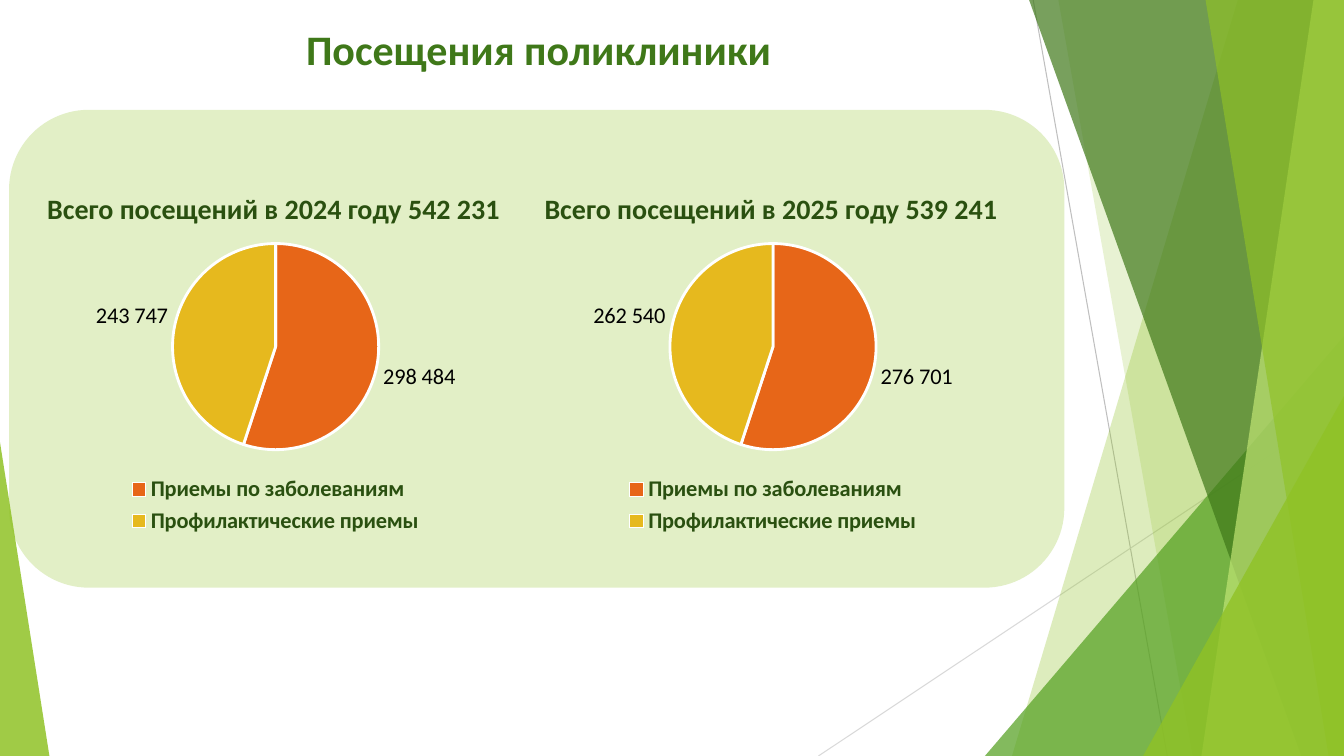
from dataclasses import dataclass

from lxml.etree import SubElement
from pptx import Presentation
from pptx.chart.data import CategoryChartData
from pptx.dml.color import RGBColor
from pptx.enum.chart import XL_CHART_TYPE as ChartType
from pptx.enum.chart import XL_LABEL_POSITION as LabelPosition
from pptx.enum.chart import XL_LEGEND_POSITION as LegendPosition
from pptx.enum.shapes import MSO_CONNECTOR as Connector
from pptx.enum.shapes import MSO_SHAPE as Shape
from pptx.enum.text import MSO_ANCHOR as Anchor
from pptx.enum.text import MSO_AUTO_SIZE as AutoSize
from pptx.enum.text import PP_ALIGN as Align
from pptx.oxml import parse_xml
from pptx.oxml.ns import nsdecls, qn
from pptx.util import Pt


@dataclass(frozen=True)
class Theme:
    font: str = "Calibri"
    chart_font: str = "Lato"
    lime: str = "90C226"
    green: str = "54A021"
    forest: str = "3F7819"
    pale: str = "C0E474"
    heading: str = "2A5010"
    black: str = "000000"
    white: str = "FFFFFF"
    ray_dark: str = "BFBFBF"
    ray_light: str = "D9D9D9"
    slices: tuple = ("E76618", "E6B91E")
    title_size: int = 30
    heading_size: int = 20
    label_size: int = 16
    chart_size: int = 10


WIDTH, HEIGHT = 960, 540
COLUMN_STEP = 355.3
CATEGORIES = ("Приемы по заболеваниям", "Профилактические приемы")
# Heading, slice values, slice labels
YEARS = (
    ("Всего посещений в 2024 году 542 231", (298484, 243747), ("298 484", "243 747")),
    ("Всего посещений в 2025 году 539 241", (298484, 243747), ("276 701", "262 540")),
)


def apply_format(target, values):
    for name, value in values.items():
        setattr(target, name, value)


class SlideBuilder:
    def __init__(self, slide, theme):
        self.slide = slide
        self.shapes = slide.shapes
        self.theme = theme

    def style_font(self, font, size, color, bold=True, name=None):
        apply_format(font, {"name": name or self.theme.font, "size": Pt(size), "bold": bold})
        font.color.rgb = RGBColor.from_string(color)

    def paint(self, shape, color, opacity):
        shape.shadow.inherit = False
        shape.fill.solid()
        shape.fill.fore_color.rgb = RGBColor.from_string(color)
        shape.line.fill.background()
        solid_color = shape.fill._xPr.find(qn("a:solidFill"))[0]
        SubElement(solid_color, qn("a:alpha"), val=str(opacity * 1000))

    def ray(self, start, end, color):
        line = self.shapes.add_connector(Connector.STRAIGHT, *map(Pt, start + end))
        line.line.width = Pt(0.75)
        line.line.color.rgb = RGBColor.from_string(color)
        SubElement(line._element.spPr, qn("a:effectLst"))

    def band(self, top_left, bottom_left, color, opacity):
        """Full-height band that reaches the right edge of the slide."""
        builder = self.shapes.build_freeform(Pt(top_left), 0)
        corners = ((WIDTH, 0), (WIDTH, HEIGHT), (bottom_left, HEIGHT))
        builder.add_line_segments([(Pt(x), Pt(y)) for x, y in corners], close=True)
        self.paint(builder.convert_to_shape(), color, opacity)

    def preset(self, kind, box, color, opacity, adjustment=None):
        shape = self.shapes.add_shape(kind, *map(Pt, box))
        if adjustment is not None:
            shape.adjustments[0] = adjustment
        self.paint(shape, color, opacity)

    def title(self, text, box):
        title = self.shapes.title
        apply_format(title, dict(zip(("left", "top", "width", "height"), map(Pt, box))))
        frame = title.text_frame
        frame.text = text
        apply_format(frame, {"word_wrap": True, "auto_size": AutoSize.NONE,
                             "vertical_anchor": Anchor.MIDDLE})
        paragraph = frame.paragraphs[0]
        paragraph.alignment = Align.CENTER
        self.style_font(paragraph.font, self.theme.title_size, self.theme.forest)

    def heading(self, text, box):
        frame = self.shapes.add_textbox(*map(Pt, box)).text_frame
        frame.text = text
        apply_format(frame, {"word_wrap": False, "auto_size": AutoSize.SHAPE_TO_FIT_TEXT})
        self.style_font(frame.paragraphs[0].font, self.theme.heading_size, self.theme.heading)

    def pie(self, values, labels, box):
        theme = self.theme
        data = CategoryChartData(number_format="#,##0")
        data.categories = CATEGORIES
        data.add_series("Series 1", values)
        chart = self.shapes.add_chart(ChartType.PIE, *map(Pt, box), data).chart
        apply_format(chart, {"has_title": False, "has_legend": True})
        self.style_font(chart.font, theme.chart_size, theme.black, False, theme.chart_font)
        apply_format(chart.legend, {"position": LegendPosition.BOTTOM, "include_in_layout": False})
        self.style_font(chart.legend.font, theme.label_size, theme.heading)

        # Slices and their labels
        plot = chart.plots[0]
        plot.vary_by_categories = True
        series = plot.series[0]
        apply_format(series.data_labels, {
            "show_value": True, "number_format": "#,##0",
            "number_format_is_linked": False, "position": LabelPosition.BEST_FIT})
        self.style_font(series.data_labels.font, theme.label_size, theme.black)
        for index, (color, text) in enumerate(zip(theme.slices, labels)):
            point = series.points[index]
            point.format.fill.solid()
            point.format.fill.fore_color.rgb = RGBColor.from_string(color)
            point.format.line.width = Pt(2)
            point.format.line.color.rgb = RGBColor.from_string(theme.white)
            label = point.data_label
            run = label.text_frame.paragraphs[0].add_run()
            run.text = text
            self.style_font(run.font, theme.label_size, theme.black, False)
            label.position = LabelPosition.OUTSIDE_END
        self.place_plot(chart, {"x": 0.28, "y": 0.04, "w": 0.44, "h": 0.67})

    def place_plot(self, chart, fractions):
        area = chart._chartSpace.chart.plotArea
        for old_layout in area.findall(qn("c:layout")):
            area.remove(old_layout)
        layout = parse_xml(f"<c:layout {nsdecls('c')}><c:manualLayout/></c:layout>")
        SubElement(layout[0], qn("c:layoutTarget"), val="inner")
        for side in "xy":
            SubElement(layout[0], qn(f"c:{side}Mode"), val="edge")
        for name, value in fractions.items():
            SubElement(layout[0], qn(f"c:{name}"), val=str(value))
        area.insert(0, layout)


def main():
    presentation = Presentation()
    presentation.slide_width, presentation.slide_height = Pt(WIDTH), Pt(HEIGHT)
    theme = Theme()
    builder = SlideBuilder(presentation.slides.add_slide(presentation.slide_layouts[5]), theme)

    # Green facets, from back to front
    builder.ray((738, 0), (833.8, HEIGHT), theme.ray_dark)
    builder.ray((WIDTH, 290), (584.6, HEIGHT), theme.ray_light)
    builder.band(884.2, 722.9, theme.lime, 30)
    builder.band(756, 851.8, theme.lime, 20)
    builder.preset(Shape.ISOSCELES_TRIANGLE, (703.5, 240, 256.5, 300), theme.green, 72, 1)
    builder.band(735.1, 929.5, theme.forest, 70)
    builder.band(938.2, 858.2, theme.pale, 70)
    builder.band(861.1, 949, theme.lime, 65)
    builder.preset(Shape.ISOSCELES_TRIANGLE, (816.5, 283, 143.5, 257), theme.lime, 80, 1)
    builder.preset(Shape.ISOSCELES_TRIANGLE, (0, 316, 35.3, 224), theme.lime, 85, 0)

    # Title and panel
    builder.title("Посещения поликлиники", (74.2, 13, 621.4, 44))
    builder.preset(Shape.ROUNDED_RECTANGLE, (6.5, 78.5, 753.8, 341.3), theme.lime, 26)

    # One column per year
    for column, (heading, values, labels) in enumerate(YEARS):
        shift = column * COLUMN_STEP
        builder.heading(heading, (26.6 + shift, 133.2, 340, 31.7))
        builder.pie(values, labels, (29.5 + shift, 165, 334.8, 220.3))

    presentation.save("out.pptx")


if __name__ == "__main__":
    main()
